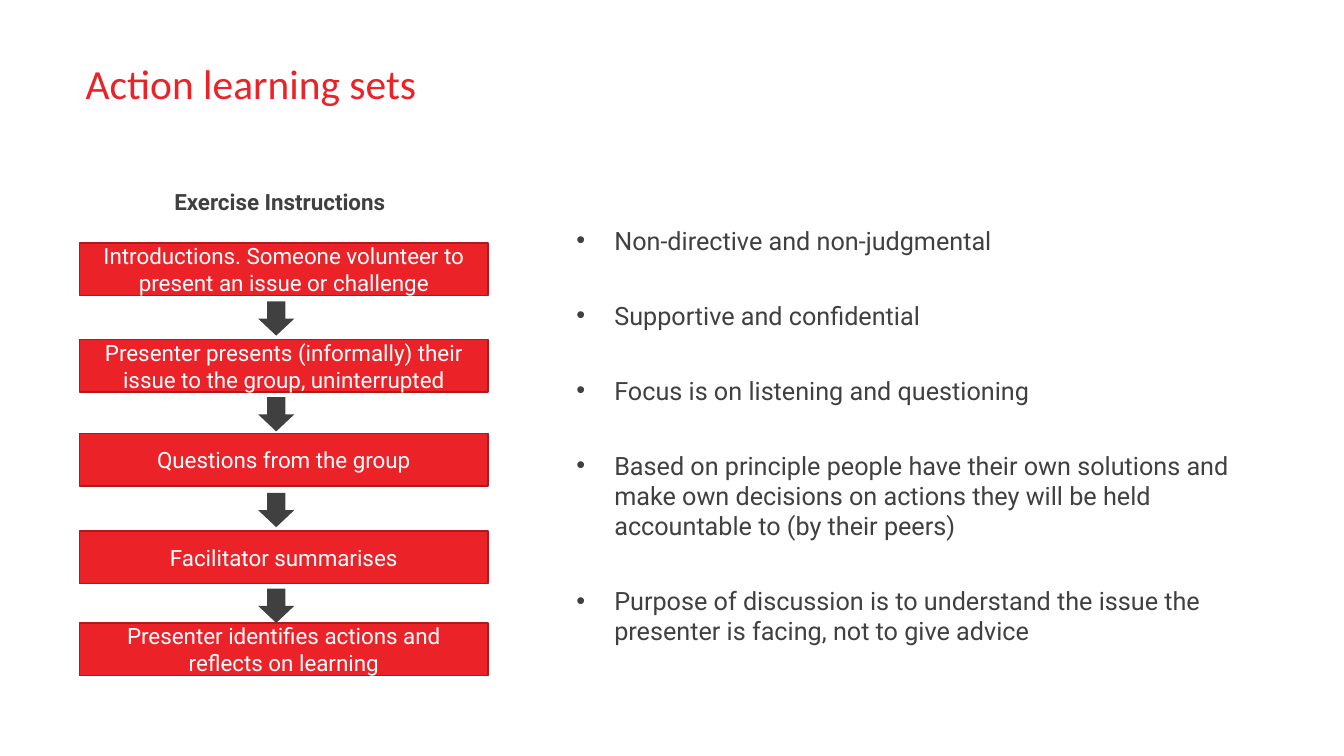
from pptx import Presentation
from pptx.dml.color import RGBColor
from pptx.enum.shapes import MSO_SHAPE
from pptx.enum.text import MSO_ANCHOR, MSO_AUTO_SIZE, PP_ALIGN
from pptx.util import Pt

RECTANGLE, DOWN_ARROW = MSO_SHAPE.RECTANGLE, MSO_SHAPE.DOWN_ARROW
TOP, MIDDLE = MSO_ANCHOR.TOP, MSO_ANCHOR.MIDDLE
LEFT, CENTER = PP_ALIGN.LEFT, PP_ALIGN.CENTER
NO_AUTOFIT = MSO_AUTO_SIZE.NONE

COLORS = {"red": "EB2227", "dark red": "AE191D", "gray": "404041", "white": "FFFFFF"}

STEPS = [
    (173.5, "Introductions. Someone volunteer to present an issue or challenge"),
    (242.6, "Presenter presents (informally) their issue to the group, uninterrupted"),
    (309.6, "Questions from the group"),
    (379.4, "Facilitator summarises"),
    (445, "Presenter identifies actions and reflects on learning"),
]
PRINCIPLES = [
    "Non-directive and non-judgmental",
    "Supportive and confidential",
    "Focus is on listening and questioning",
    "Based on principle people have their own solutions and make own decisions "
    "on actions they will be held accountable to (by their peers)",
    "Purpose of discussion is to understand the issue the presenter is facing, "
    "not to give advice",
]


def place(shape, left, top, width, height, anchor=TOP):
    """Position a text-bearing shape and fix how its text sits inside it."""
    shape.left, shape.top, shape.width, shape.height = map(Pt, (left, top, width, height))
    frame = shape.text_frame
    frame.word_wrap = True
    frame.auto_size = NO_AUTOFIT
    frame.vertical_anchor = anchor
    return frame


def write(paragraph, text, size, color, font="Roboto", bold=False, align=LEFT, indent=(0, 0)):
    """Add one run; indent is the left margin and first-line offset."""
    paragraph.alignment = align
    properties = paragraph._p.get_or_add_pPr()
    properties.set("marL", str(Pt(indent[0])))
    properties.set("indent", str(Pt(indent[1])))
    run = paragraph.add_run()
    run.text = text
    run.font.name = font
    run.font.size = Pt(size)
    run.font.bold = bold
    run.font.color.rgb = RGBColor.from_string(COLORS[color])


presentation = Presentation()
presentation.slide_width, presentation.slide_height = Pt(960), Pt(540)
slide = presentation.slides.add_slide(presentation.slide_layouts[1])
shapes = slide.shapes

# Title
title = place(shapes.title, 36, 47.5, 809, 44).paragraphs[0]
title.line_spacing = 0.7
write(title, "Action learning sets", 29.6, "red", font="Calibri", indent=(18, 0))

# Exercise steps
heading = place(shapes.add_textbox(0, 0, 0, 0), 81.4, 131, 509, 54).paragraphs[0]
write(heading, "Exercise Instructions", 16, "gray", bold=True, indent=(36, 0))

for top, text in STEPS:
    box = shapes.add_shape(RECTANGLE, 0, 0, 0, 0)
    box.shadow.inherit = False
    box.fill.solid()
    box.fill.fore_color.rgb = RGBColor.from_string(COLORS["red"])
    box.line.color.rgb = RGBColor.from_string(COLORS["dark red"])
    box.line.width = Pt(1)
    frame = place(box, 56.9, top, 291.6, 37.5, MIDDLE)
    write(frame.paragraphs[0], text, 16, "white", align=CENTER)

for index in range(len(STEPS) - 1):
    arrow = shapes.add_shape(DOWN_ARROW, Pt(184.3), Pt(215.3 + 68.4 * index), Pt(26), Pt(24.5))
    arrow.shadow.inherit = False
    arrow.fill.solid()
    arrow.fill.fore_color.rgb = RGBColor.from_string(COLORS["gray"])
    arrow.line.fill.background()

# Principles
frame = place(slide.placeholders[1], 368.6, 157, 540.7, 366.5)
for index, text in enumerate(PRINCIPLES):
    paragraph = frame.add_paragraph() if index else frame.paragraphs[0]
    paragraph.space_before = Pt(32 if index else 0)
    write(paragraph, text, 18, "gray", indent=(63, -27))

presentation.save("out.pptx")
